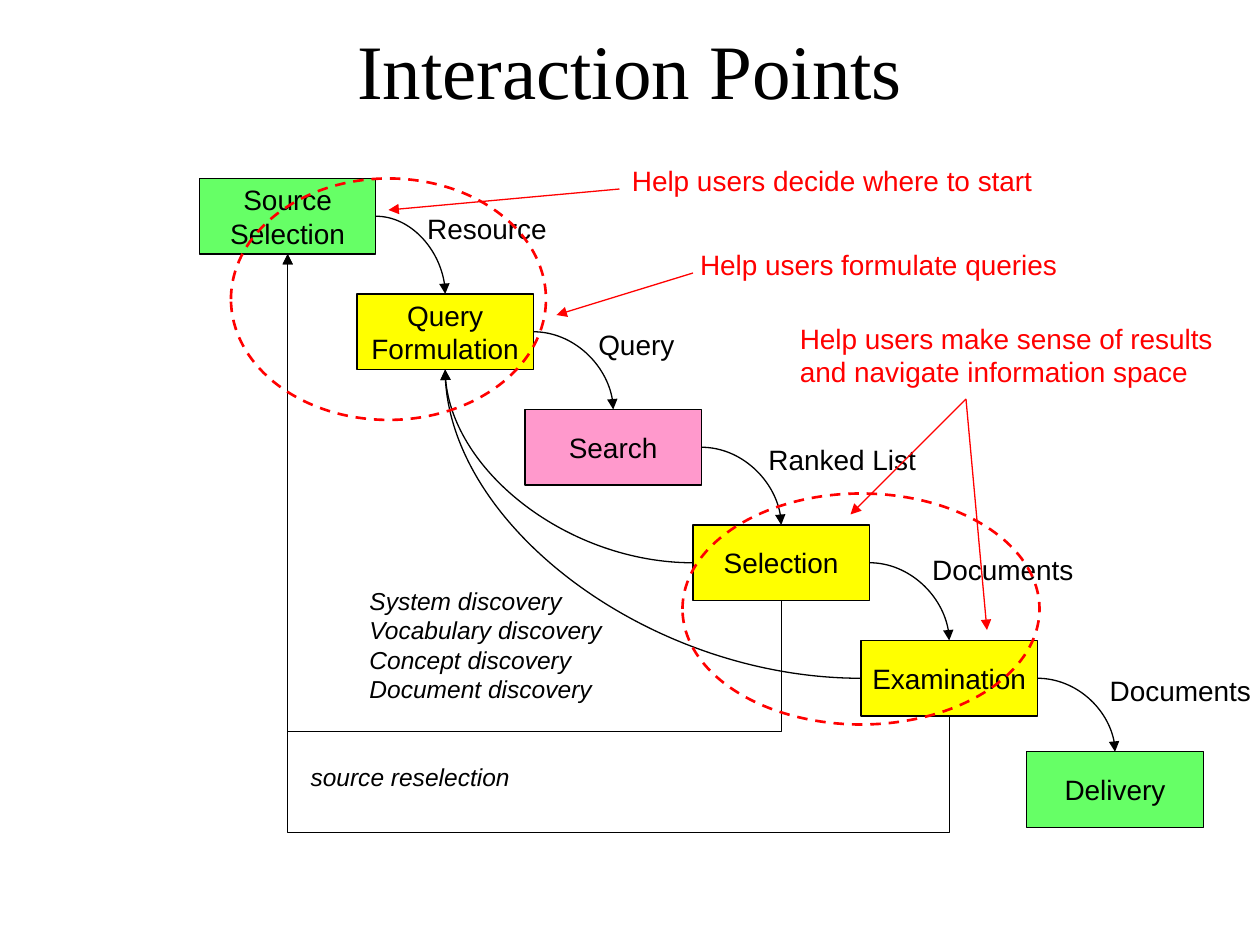
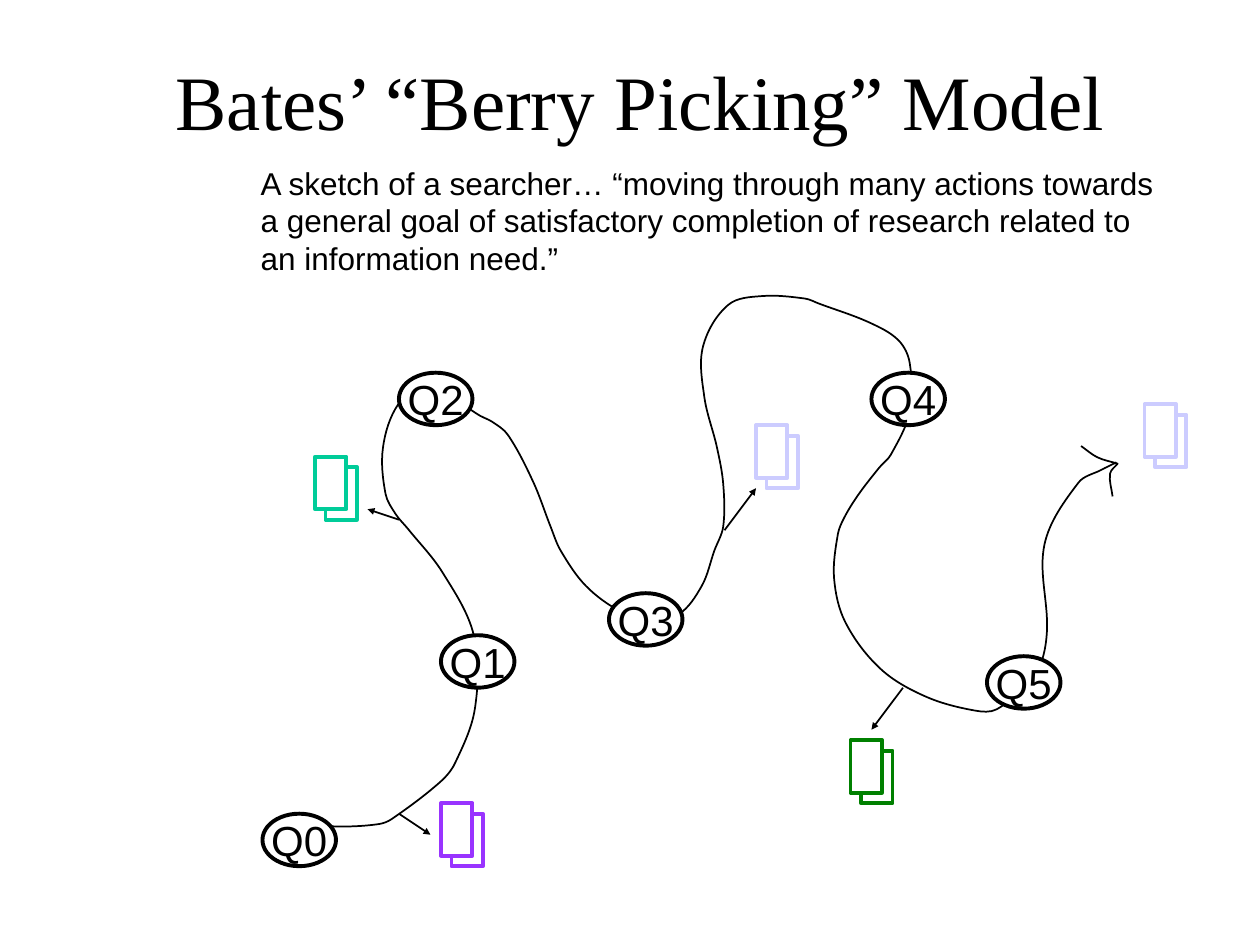
from dataclasses import dataclass
from math import hypot

from lxml import etree
from pptx import Presentation
from pptx.dml.color import RGBColor
from pptx.enum.dml import MSO_LINE
from pptx.enum.shapes import MSO_CONNECTOR, MSO_SHAPE
from pptx.enum.text import MSO_ANCHOR, PP_ALIGN
from pptx.oxml.ns import qn
from pptx.util import Emu, Inches, Pt

RECT, OVAL = MSO_SHAPE.RECTANGLE, MSO_SHAPE.OVAL
LINE, BENT, CURVE = MSO_CONNECTOR.STRAIGHT, MSO_CONNECTOR.ELBOW, MSO_CONNECTOR.CURVE
LEFT, CENTER = PP_ALIGN.LEFT, PP_ALIGN.CENTER
TOP, MIDDLE = MSO_ANCHOR.TOP, MSO_ANCHOR.MIDDLE
DASH = MSO_LINE.DASH
WIDTH, HEIGHT = Inches(10), Inches(7.5)
CELL = WIDTH / 120
SITE = {"top": 0, "left": 1, "bottom": 2, "right": 3}


@dataclass(frozen=True)
class Theme:
    """Colours, fonts and point sizes shared by the slides."""
    ink: str = "000000"
    paper: str = "FFFFFF"
    alert: str = "FF0000"
    green: str = "66FF66"
    yellow: str = "FFFF00"
    pink: str = "FF99CC"
    violet: str = "9933FF"
    teal: str = "00CC99"
    lilac: str = "CCCCFF"
    forest: str = "008000"
    serif: str = "Times New Roman"
    sans: str = "Arial"
    title: int = 44
    query: int = 24
    lead: int = 18
    body: int = 16
    note: int = 14
    thin: float = 0.75
    path_line: float = 1
    dash_line: float = 1.5
    bold_line: float = 2.25


T = Theme()

STEPS = [
    ("Source\nSelection", T.green, 19, 17),
    ("Query\nFormulation", T.yellow, 34, 28),
    ("Search", T.pink, 50, 39),
    ("Selection", T.yellow, 66, 50),
    ("Examination", T.yellow, 82, 61),
    ("Delivery", T.green, 97.8, 71.6),
]
FLOWS = [
    ("Resource", 39.5, 19.6, 13.8),
    ("Query", 55.8, 30.6, 9.7),
    ("Ranked List", 72, 41.6, 16.4),
    ("Documents", 87.6, 52, 15.5),
    ("Documents", 104.5, 63.6, 15.5),
]
FINDS = "System discovery\nVocabulary discovery\nConcept discovery\nDocument discovery"
HELPS = [
    ("Help users decide where to start", 59, 15, 40.7, False),
    ("Help users formulate queries", 65.5, 23, 36.5, False),
    ("Help users make sense of results and navigate information space",
     75, 30, 42, True),
]
HINTS = [((66, 26), (53, 30)), ((92, 38), (81, 49)),
         ((59, 18), (37, 20)), ((92, 38), (94, 60))]
ZONES = [(22, 17, 30, 23), (65, 47, 34, 22)]

QUERIES = [(25, 77.5), (42, 60.5), (38, 35.5), (58, 56.5), (83, 35.5), (94, 62.5)]
FINDINGS = [(T.violet, 42, 76.5), (T.teal, 30, 43.5), (T.lilac, 72, 40.5),
            (T.lilac, 109, 38.5), (T.forest, 81, 70.5)]
PICKS = [((38, 77.5), (41, 79.5)), ((38, 49.5), (35, 48.5)),
         ((69, 50.5), (72, 46.5)), ((86, 65.5), (83, 69.5))]
TRAIL = [
    (23.8, 65.4), (27.1, 65.6), (30.1, 65.4), (31.1, 65), (34.9, 62.1),
    (36.1, 60.6), (37.7, 56.2), (37.6, 50.4), (35.1, 45.4), (32.4, 42),
    (31.4, 40.8), (30.6, 39.2), (30.4, 35.5), (31.6, 32.1), (32.9, 31.8),
    (36.5, 32.1), (38.1, 33), (39.1, 33.5), (40.3, 34.5), (42.3, 38.2),
    (43.7, 41.8), (44.5, 43.7), (46.5, 46.5), (49.2, 48.5), (51.4, 49.1),
    (53.8, 48.8), (55.7, 46.5), (56.7, 43.7), (57.4, 41.8), (57.4, 38.4),
    (56.9, 35.5), (55.9, 31.5), (55.8, 27.5), (57.8, 24.2), (60.5, 23.5),
    (63.9, 23.7), (65, 24.1), (69, 25.6), (71.3, 27), (72.2, 28.8),
    (72.2, 32.7), (70.7, 36.1), (69.8, 37.1), (68.1, 39.3), (67, 41.1),
    (66.5, 42.4), (66.2, 45.9), (67.1, 49.4), (69.9, 53.1), (73.5, 55.3),
    (77.4, 56.4), (79.1, 56.3), (81.5, 54.2), (82.6, 52.7), (83.1, 49.9),
    (82.9, 43.2), (85.6, 38.3), (87.4, 37.3), (88.6, 36.7),
]
TIP = [(85.8, 35.4), (87.1, 36.3), (88.7, 36.8), (88.7, 36.8), (88.1, 37.6),
       (88.3, 39.4)]


def emu(*cells):
    """Turn grid cells into slide lengths."""
    return [Emu(round(cell * CELL)) for cell in cells]


def rgb(code):
    """Turn a hex code into a colour."""
    return RGBColor.from_string(code)


def write(shape, text, size, font=T.sans, color=T.ink, align=LEFT,
          anchor=TOP, wrap=False, slant=False):
    """Fill a shape with evenly styled paragraphs."""
    frame = shape.text_frame
    frame.text = text
    frame.word_wrap = wrap
    frame.vertical_anchor = anchor
    if align == LEFT and not wrap:
        frame.margin_right = 0
    for para in frame.paragraphs:
        para.alignment = align
        para.font.name, para.font.size = font, Pt(size)
        para.font.color.rgb = rgb(color)
        para.font.italic = slant


def label(slide, text, col, row, wide, tall=4.4, size=T.body, **style):
    """Place a text box on the grid."""
    box = slide.shapes.add_textbox(*emu(col, row, wide, tall))
    write(box, text, size, **style)


def title(slide, text, col, tall):
    """Place the slide title."""
    label(slide, text, col, 2, 102, tall, T.title, font=T.serif,
          align=CENTER, anchor=MIDDLE, wrap=True)


def form(slide, kind, col, row, wide, tall, fill, color, weight):
    """Place a preset shape with a plain fill and outline."""
    shape = slide.shapes.add_shape(kind, *emu(col, row, wide, tall))
    shape.shadow.inherit = False
    if fill:
        shape.fill.solid()
        shape.fill.fore_color.rgb = rgb(fill)
    else:
        shape.fill.background()
    shape.line.color.rgb = rgb(color)
    shape.line.width = Pt(weight)
    return shape


def arrow(slide, kind, start, end, color=T.ink, weight=T.thin, head="med"):
    """Draw a connector with a triangle at its end."""
    link = slide.shapes.add_connector(kind, *emu(*start, *end))
    link.line.color.rgb = rgb(color)
    link.line.width = Pt(weight)
    etree.SubElement(link.line._get_or_add_ln(), qn("a:tailEnd"),
                     type="triangle", w=head, len=head)
    etree.SubElement(link._element.spPr, qn("a:effectLst"))
    return link


def arc(slide, tail, side, head, edge):
    """Join two boxes with a quarter curve."""
    link = arrow(slide, CURVE, (0, 0), (1, 1))
    link.begin_connect(tail, SITE[side])
    link.end_connect(head, SITE[edge])
    link._element.spPr.find(qn("a:prstGeom")).set("prst", "curvedConnector2")


def loop(slide, start, end, floor):
    """Run an elbow from one box foot down to a floor row and up to another."""
    (x1, y1), (x2, y2) = start, end
    mid_x, mid_y = (x1 + x2) / 2, (y1 + y2) / 2
    half_w, half_h = (y1 - y2) / 2, (x1 - x2) / 2
    link = arrow(slide, BENT, (mid_x - half_w, mid_y - half_h),
                 (mid_x + half_w, mid_y + half_h))
    frame = link._element.spPr.find(qn("a:xfrm"))
    frame.set("rot", "16200000")
    frame.set("flipV", "1")
    guides = link._element.spPr.find(qn("a:prstGeom")).find(qn("a:avLst"))
    bend = round((y1 - floor) / (y1 - y2) * 100000)
    etree.SubElement(guides, qn("a:gd"), name="adj1", fmla=f"val {bend}")


def smooth(knots):
    """Give the cubic control points and ends that follow the knots."""
    slopes = []
    for before, after in zip(knots[:1] + knots[:-1], knots[1:] + knots[-1:]):
        dx, dy = after[0] - before[0], after[1] - before[1]
        size = hypot(dx, dy)
        slopes.append((dx / size, dy / size))
    points = []
    for i, (a, b) in enumerate(zip(knots, knots[1:])):
        reach = hypot(b[0] - a[0], b[1] - a[1]) / 3
        (ux, uy), (vx, vy) = slopes[i:i + 2]
        points += [(a[0] + ux * reach, a[1] + uy * reach),
                   (b[0] - vx * reach, b[1] - vy * reach), b]
    return points


def trail(slide, knots):
    """Draw an open curve through knots in percent of the slide width."""
    share = WIDTH / 100
    first, *rest = [(x * share, y * share) for x, y in knots[:1] + smooth(knots)]
    maker = slide.shapes.build_freeform(*first)
    maker.add_line_segments(rest, close=False)
    shape = maker.convert_to_shape()
    shape.shadow.inherit = False
    shape.fill.background()
    shape.line.color.rgb = rgb(T.ink)
    shape.line.width = Pt(T.path_line)
    route = next(shape._element.iter(qn("a:path")))
    lines = route.findall(qn("a:lnTo"))
    for i in range(0, len(lines), 3):
        cubic = etree.SubElement(route, qn("a:cubicBezTo"))
        for line in lines[i:i + 3]:
            cubic.append(line[0])
            route.remove(line)


def sheets(slide, color, col, row):
    """Draw two stacked pages."""
    for shift in (1, 0):
        form(slide, RECT, col + shift, row + shift, 3, 5, T.paper, color,
             T.bold_line)


def points_slide(slide):
    """Build the search process with its interaction points."""
    title(slide, "Interaction Points", 9, 9)
    boxes = []
    for name, fill, col, row in STEPS:
        box = form(slide, RECT, col, row, 16.8, 7.2, fill, T.ink, T.thin)
        write(box, name, T.body, align=CENTER, anchor=MIDDLE)
        boxes.append(box)
    for tail, head, flow in zip(boxes, boxes[1:], FLOWS):
        arc(slide, tail, "right", head, "top")
        label(slide, *flow)
    feet = [(col + 8.4, row + 7.2) for _, _, col, row in STEPS]
    for step, floor in ((4, 79.3), (3, 69.7)):
        loop(slide, feet[step], feet[0], floor)
        arc(slide, boxes[step], "left", boxes[1], "bottom")
    label(slide, "source reselection", 28.4, 72, 27.6, 4, T.note,
          wrap=True, slant=True)
    label(slide, FINDS, 34, 55.2, 24.6, 12.4, T.note, slant=True)
    for zone in ZONES:
        ring = form(slide, OVAL, *zone, None, T.alert, T.dash_line)
        ring.line.dash_style = DASH
    for start, end in HINTS:
        arrow(slide, LINE, start, end, T.alert)
    for text, col, row, wide, wrap in HELPS:
        label(slide, text, col, row, wide, color=T.alert, wrap=wrap)


def berry_slide(slide):
    """Build the winding path of changing queries."""
    trail(slide, TRAIL)
    for find in FINDINGS:
        sheets(slide, *find)
    trail(slide, TIP)
    for i, (col, row) in enumerate(QUERIES):
        oval = form(slide, OVAL, col, row, 7, 5, T.paper, T.ink, T.bold_line)
        write(oval, f"Q{i}", T.query, align=CENTER, anchor=MIDDLE)
    for start, end in PICKS:
        arrow(slide, LINE, start, end, weight=T.path_line, head="sm")
    label(slide, "A sketch of a searcher… “moving through many actions towards a "
          "general goal of satisfactory completion of research related to an "
          "information need.”", 23.65, 15, 89.3, 12, T.lead, wrap=True)
    title(slide, "Bates’ “Berry Picking” Model", 10, 15)


def main():
    """Build and save the deck."""
    deck = Presentation()
    deck.slide_width, deck.slide_height = WIDTH, HEIGHT
    for build in (points_slide, berry_slide):
        build(deck.slides.add_slide(deck.slide_layouts[6]))
    deck.save("out.pptx")


if __name__ == "__main__":
    main()
